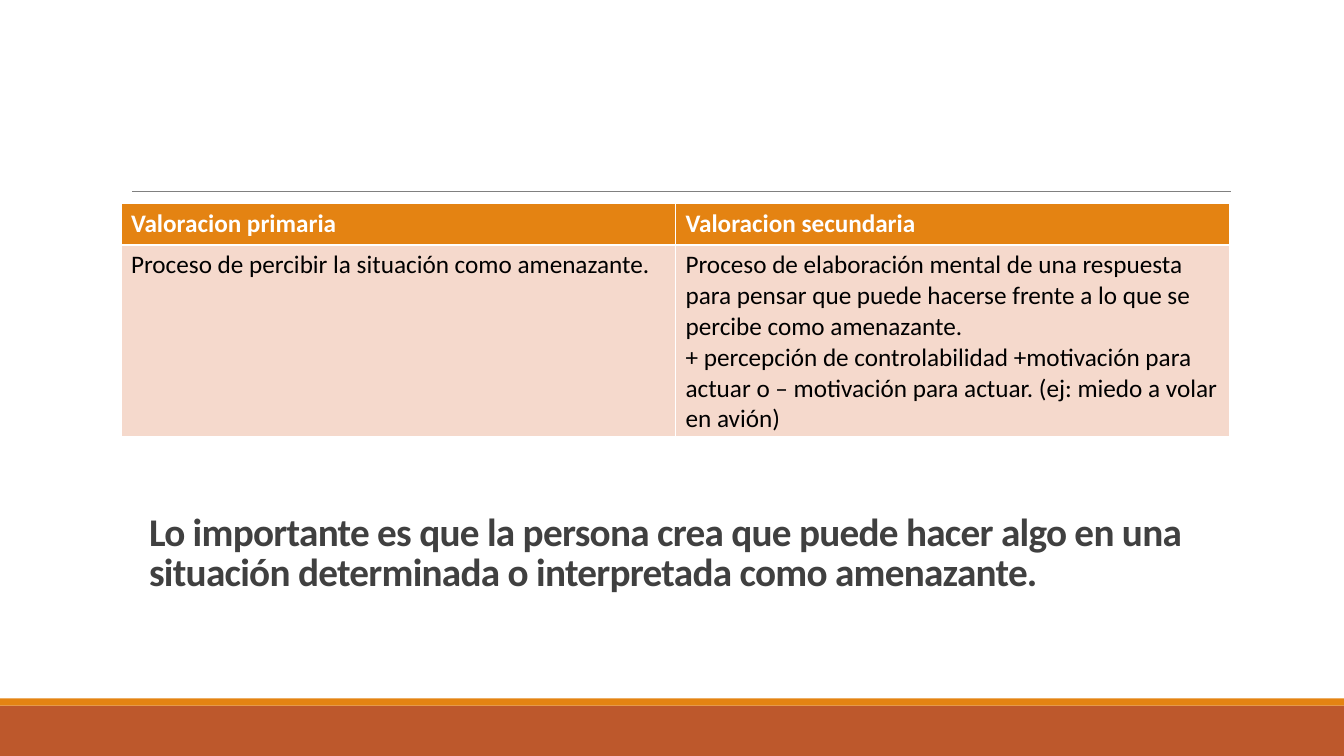
from pptx import Presentation
from pptx import util as u
from pptx.dml.color import RGBColor
from pptx.enum import shapes, text
from pptx.oxml.ns import qn
from lxml import etree

COLS, ROWS = 13.33, 7.5
CELL = u.Inches(1)
INK = {
    "rust": "BD582C",
    "amber": "E48312",
    "blush": "F5D9CC",
    "rule": "808080",
    "title": "404040",
    "white": "FFFFFF",
    "black": "000000",
}
HEAD = {"size": u.Pt(18), "name": "Calibri", "bold": True}
BODY = {**HEAD, "bold": False}
CLAIM = {"size": u.Pt(28), "name": "Calibri", "bold": True}
TABLE = [
    (0.41, "amber", "white", HEAD, ["Valoracion primaria", "Valoracion secundaria"]),
    (1.9, "blush", "black", BODY, [
        "Proceso de percibir la situación como amenazante.",
        "Proceso de elaboración mental de una respuesta para pensar que puede hacerse "
        "frente a lo que se percibe como amenazante.\n"
        "+ percepción de controlabilidad +motivación para actuar o – motivación para "
        "actuar. (ej: miedo a volar en avión)",
    ]),
]


def place(*spans):
    return [round(span * CELL) for span in spans]


def paint(fill, ink):
    fill.solid()
    fill.fore_color.rgb = RGBColor.from_string(INK[ink])


def style(font, form, ink):
    for key, val in form.items():
        setattr(font, key, val)
    font.color.rgb = RGBColor.from_string(INK[ink])


def footer(slide, box):
    left, top, width, height = box
    strip = 0.07
    bands = [("rust", top + strip, height - strip), ("amber", top, strip)]
    for ink, y, tall in bands:
        band = slide.shapes.add_shape(
            shapes.MSO_SHAPE.RECTANGLE, *place(left, y, width, tall))
        band.shadow.inherit = False
        paint(band.fill, ink)
        band.line.fill.background()


def rule(slide, box):
    left, top, width, height = box
    line = slide.shapes.add_connector(
        shapes.MSO_CONNECTOR.STRAIGHT,
        *place(left, top, left + width, top + height))
    line.line.width = u.Pt(0.5)
    paint(line.line.fill, "rule")
    etree.SubElement(line._element.spPr, qn("a:effectLst"))


def claim(slide, box, words):
    frame = slide.shapes.add_textbox(*place(*box)).text_frame
    frame.word_wrap = True
    frame.vertical_anchor = text.MSO_ANCHOR.BOTTOM
    para = frame.paragraphs[0]
    para.line_spacing = 0.85
    run = para.add_run()
    run.text = words
    style(run.font, CLAIM, "title")
    run.font._element.set("spc", "-50")


def compare(slide, box, rows):
    count = len(rows[0][-1])
    table = slide.shapes.add_table(len(rows), count, *place(*box)).table
    for col in table.columns:
        col.width = round(box[2] / count * CELL)
    for r, (tall, fill, ink, form, words) in enumerate(rows):
        table.rows[r].height = round(tall * CELL)
        for c, word in enumerate(words):
            cell = table.cell(r, c)
            cell.text = word
            paint(cell.fill, fill)
            for para in cell.text_frame.paragraphs:
                for run in para.runs:
                    style(run.font, form, ink)


def main():
    deck = Presentation()
    deck.slide_width, deck.slide_height = place(COLS, ROWS)
    slide = deck.slides.add_slide(deck.slide_layouts[6])
    paint(slide.background.fill, "white")
    footer(slide, (0, ROWS - 0.57, COLS, 0.57))
    rule(slide, (1.31, 1.9, 10.9, 0))
    claim(slide, (1.38, 4.79, 10.82, 1.16),
          "Lo importante es que la persona crea que puede hacer algo en una "
          "situación determinada o interpretada como amenazante.")
    compare(slide, (1.2, 2.02, 11, 2.31), TABLE)
    deck.save("out.pptx")


if __name__ == "__main__":
    main()
